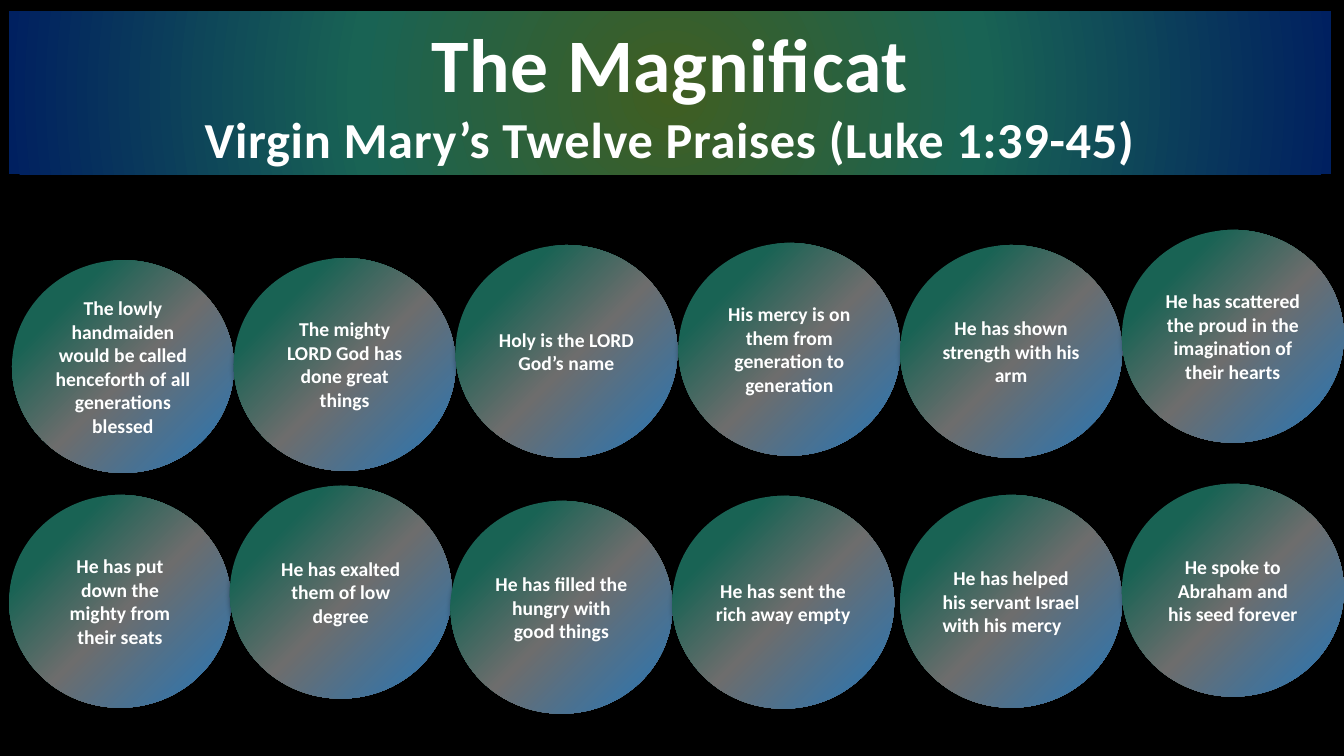
from dataclasses import dataclass

from lxml.etree import fromstring
from pptx import Presentation
from pptx.dml.color import RGBColor
from pptx.enum.shapes import MSO_SHAPE as Preset
from pptx.enum.text import MSO_ANCHOR as Anchor, MSO_AUTO_SIZE as AutoSize, PP_ALIGN as Align
from pptx.oxml.ns import nsdecls, qn
from pptx.util import Pt


@dataclass(frozen=True)
class Theme:
    font: str = "Calibri"
    text: str = "FFFFFF"
    background: str = "000000"
    banner: tuple = ((0, "405E21"), (47, "196354"), (100, "002060"))
    circle: tuple = ((0, "2476B9"), (47, "6D6D6D"), (78, "196354"))
    title_size: int = 54
    subtitle_size: int = 36
    praise_size: int = 14


THEME = Theme()
CIRCLE_WIDTH, CIRCLE_HEIGHT = 158.5, 152

# Each praise: left and top of its circle, wording
PRAISES = [
    (8.6, 185.8, "The lowly handmaiden would be called henceforth of all generations blessed"),
    (167, 184.3, "The mighty LORD God has done great things"),
    (325.4, 175, "Holy is the LORD God’s name"),
    (484.6, 173.5, "His mercy is on them from generation to generation"),
    (643, 175, "He has shown strength with his arm"),
    (801.4, 164.2, "He has scattered the proud in the imagination of their hearts"),
    (6.5, 353.5, "He has put down the mighty from their seats"),
    (164.2, 347, "He has exalted them of low degree"),
    (321.8, 357.8, "He has filled the hungry with good things"),
    (480.2, 354.2, "He has sent the rich away empty"),
    (643, 353.5, "He has helped his servant Israel with his mercy\t"),
    (801.4, 345.6, "He spoke to Abraham and his seed forever"),
]


def write(paragraph, text, size, spacing=0):
    paragraph.alignment = Align.CENTER
    run = paragraph.add_run()
    run.text = text
    run.font.name = THEME.font
    run.font.size = Pt(size)
    run.font.bold = True
    run.font.color.rgb = RGBColor.from_string(THEME.text)
    if spacing:
        run._r.get_or_add_rPr().set("spc", str(int(spacing * 100)))


def fill_radial(shape, stops, focus):
    """Fill with a circular gradient; focus gives left, top, right, bottom in percent."""
    stop_xml = "".join(
        f'<a:gs pos="{position * 1000}"><a:srgbClr val="{color}"/></a:gs>'
        for position, color in stops)
    sides = " ".join(f'{side}="{value * 1000}"' for side, value in zip("ltrb", focus))
    gradient = fromstring(
        f'<a:gradFill {nsdecls("a")} rotWithShape="1"><a:gsLst>{stop_xml}</a:gsLst>'
        f'<a:path path="circle"><a:fillToRect {sides}/></a:path></a:gradFill>')
    shape.fill.background()
    properties = shape._element.spPr
    properties.replace(properties.find(qn("a:noFill")), gradient)


def add_gradient_shape(slide, preset, box, stops, focus):
    shape = slide.shapes.add_shape(preset, *map(Pt, box))
    shape.shadow.inherit = False
    shape.line.fill.background()
    fill_radial(shape, stops, focus)
    return shape


def add_soft_shadow(shape):
    effects = shape._element.spPr.find(qn("a:effectLst"))
    effects.append(fromstring(
        f'<a:outerShdw {nsdecls("a")} blurRad="{Pt(3.5)}" dist="{Pt(2.2)}" dir="5400000" '
        'rotWithShape="0"><a:srgbClr val="000000"><a:alpha val="32000"/></a:srgbClr>'
        '</a:outerShdw>'))


def add_banner(slide, left, top, width, height):
    add_gradient_shape(slide, Preset.RECTANGLE, (left, top, width, height),
                       THEME.banner, (50, 50, 50, 50))
    title = slide.shapes.title
    margin = 108
    title.left, title.top = Pt(left + margin), Pt(top + 0.7)
    title.width, title.height = Pt(width - 2 * margin), Pt(height)
    slide.shapes._spTree.append(title._element)  # bring in front of the banner
    frame = title.text_frame
    frame.word_wrap = True
    frame.auto_size = AutoSize.SHAPE_TO_FIT_TEXT
    frame.vertical_anchor = Anchor.TOP
    write(frame.paragraphs[0], "The Magnificat", THEME.title_size, spacing=0.5)
    write(frame.add_paragraph(), "Virgin Mary’s Twelve Praises (Luke 1:39-45)",
          THEME.subtitle_size, spacing=0.5)


def add_praise(slide, left, top, text):
    circle = add_gradient_shape(slide, Preset.OVAL, (left, top, CIRCLE_WIDTH, CIRCLE_HEIGHT),
                                THEME.circle, (100, 100, 0, 0))
    add_soft_shadow(circle)
    frame = circle.text_frame
    frame.word_wrap = True
    frame.vertical_anchor = Anchor.MIDDLE
    write(frame.paragraphs[0], text, THEME.praise_size)


def main():
    presentation = Presentation()
    presentation.slide_width, presentation.slide_height = Pt(960), Pt(540)
    slide = presentation.slides.add_slide(presentation.slide_layouts[5])
    slide.background.fill.solid()
    slide.background.fill.fore_color.rgb = RGBColor.from_string(THEME.background)
    add_banner(slide, 6.5, 7.9, 944.6, 116.8)
    for left, top, text in PRAISES:
        add_praise(slide, left, top, text)
    presentation.save("out.pptx")


if __name__ == "__main__":
    main()
